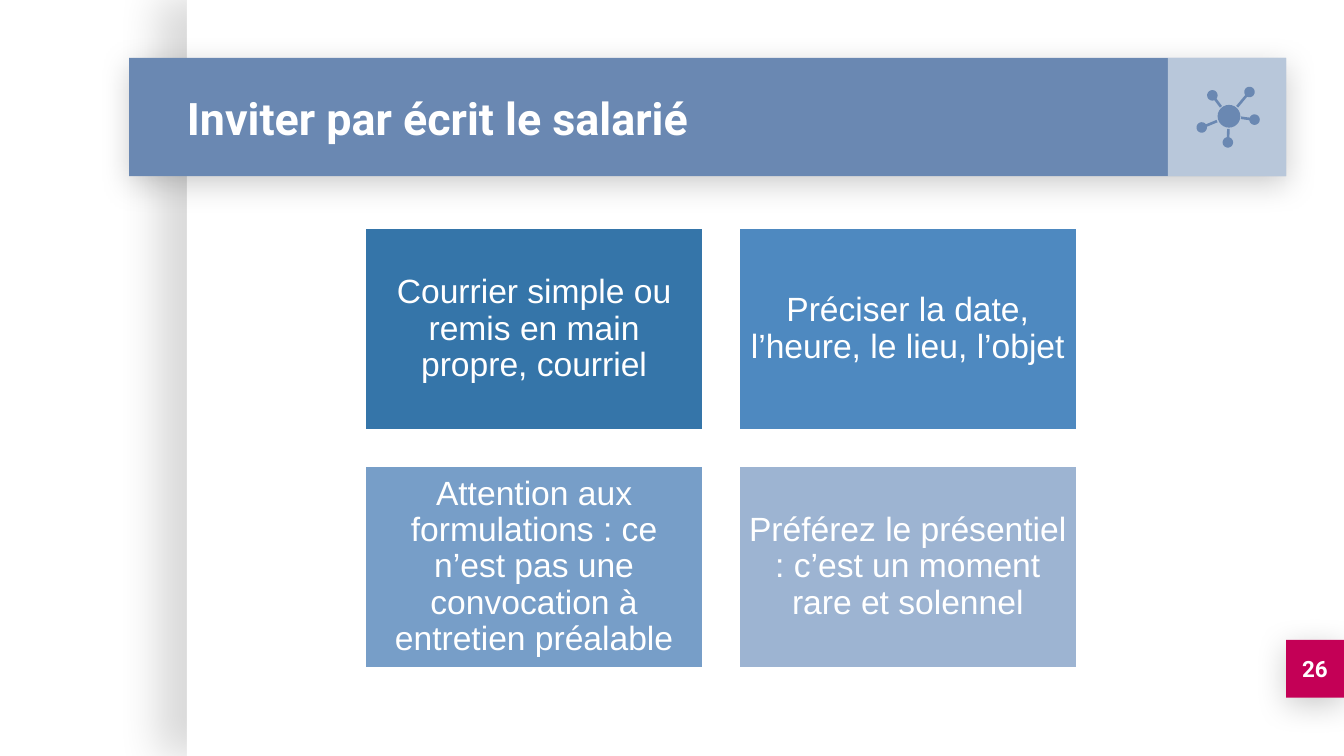
"""Build the slide on inviting the employee in writing."""
import math
from dataclasses import dataclass

from lxml import etree
from pptx import Presentation
from pptx.dml.color import RGBColor
from pptx.enum.shapes import MSO_SHAPE
from pptx.enum.text import MSO_ANCHOR, PP_ALIGN
from pptx.oxml.ns import qn
from pptx.shapes.autoshape import Shape
from pptx.shapes.shapetree import SlideShapes
from pptx.util import Pt

RECTANGLE, OVAL = MSO_SHAPE.RECTANGLE, MSO_SHAPE.OVAL
MIDDLE = MSO_ANCHOR.MIDDLE
LEFT, CENTER = PP_ALIGN.LEFT, PP_ALIGN.CENTER

WHITE = RGBColor(0xFF, 0xFF, 0xFF)
SLATE = RGBColor(0x6A, 0x88, 0xB2)
CRIMSON = RGBColor(0xC4, 0x00, 0x56)
DEEP_BLUE = RGBColor(0x35, 0x75, 0xA9)
MID_BLUE = RGBColor(0x4E, 0x89, 0xC0)
SOFT_BLUE = RGBColor(0x77, 0x9E, 0xC8)
PALE_BLUE = RGBColor(0x9D, 0xB4, 0xD2)

SLIDE_WIDTH, SLIDE_HEIGHT = 720, 405
BAND_TOP, BAND_HEIGHT, BAND_RIGHT = 31, 63.4, 689
CARD_LEFT, CARD_TOP, CARD_WIDTH, CARD_HEIGHT, CARD_GAP = 195.1, 121.7, 182.1, 109.3, 18.1
HUB_X, HUB_Y, HUB_RADIUS = 658.4, 62.3, 6.1
NODE_RADIUS, STEM_HALF_WIDTH, ARC_STEPS = 2.8, 0.7, 24


@dataclass(frozen=True)
class Box:
    left: float
    top: float
    width: float
    height: float


@dataclass(frozen=True)
class Shadow:
    alpha: int
    blur: float
    distance: float
    angle: int


@dataclass(frozen=True)
class Card:
    text: str
    color: RGBColor


@dataclass(frozen=True)
class Node:
    x: float
    y: float
    stem_x: float
    stem_y: float


PAGE_SHADOW = Shadow(15, 22.5, 15, 180)
RAISED_SHADOW = Shadow(20, 16.9, 3.8, 90)

CARDS = [
    Card("Courrier simple ou remis en main propre, courriel", DEEP_BLUE),
    Card("Préciser la date, l’heure, le lieu, l’objet", MID_BLUE),
    Card("Attention aux formulations : ce n’est pas une convocation à entretien préalable", SOFT_BLUE),
    Card("Préférez le présentiel : c’est un moment rare et solennel", PALE_BLUE),
]

NODES = [
    Node(669.4, 49.3, 662.8, 57.2),
    Node(649.5, 51.1, 654.1, 57.2),
    Node(643.8, 68.3, 652, 64.9),
    Node(657.8, 76.3, 658.1, 69.1),
    Node(672.1, 64.1, 664.9, 63.1),
]


def paint(shape: Shape, color: RGBColor) -> None:
    """Give a shape a flat fill without line or shadow."""
    shape.shadow.inherit = False
    shape.fill.solid()
    shape.fill.fore_color.rgb = color
    shape.line.fill.background()


def add_block(shapes: SlideShapes, box: Box, color: RGBColor, kind: MSO_SHAPE = RECTANGLE) -> Shape:
    """Add a flat preset shape."""
    block = shapes.add_shape(kind, Pt(box.left), Pt(box.top), Pt(box.width), Pt(box.height))
    paint(block, color)
    return block


def cast_shadow(shape: Shape, shadow: Shadow) -> None:
    """Add a black outer shadow to a shape."""
    effects = shape.fill._xPr.find(qn("a:effectLst"))
    outer = etree.SubElement(
        effects, qn("a:outerShdw"), blurRad=str(Pt(shadow.blur)), dist=str(Pt(shadow.distance)),
        dir=str(shadow.angle * 60000), algn="bl", rotWithShape="0")
    black = etree.SubElement(outer, qn("a:srgbClr"), val="000000")
    etree.SubElement(black, qn("a:alpha"), val=str(shadow.alpha * 1000))


def write(shape: Shape, text: str, font: str, size: float, inset: float,
          align: PP_ALIGN = CENTER, bold: bool = False, spacing: float = 1.0) -> None:
    """Write one white, vertically centred paragraph."""
    frame = shape.text_frame
    frame.word_wrap = True
    frame.vertical_anchor = MIDDLE
    frame.margin_left = frame.margin_right = frame.margin_top = frame.margin_bottom = Pt(inset)
    paragraph = frame.paragraphs[0]
    paragraph.text = text
    paragraph.alignment = align
    paragraph.line_spacing = spacing
    paragraph.font.name = font
    paragraph.font.size = Pt(size)
    paragraph.font.bold = bold
    paragraph.font.color.rgb = WHITE


def add_card(shapes: SlideShapes, card: Card, index: int) -> None:
    """Place a card in the two-column grid."""
    row, column = divmod(index, 2)
    box = Box(CARD_LEFT + column * (CARD_WIDTH + CARD_GAP),
              CARD_TOP + row * (CARD_HEIGHT + CARD_GAP), CARD_WIDTH, CARD_HEIGHT)
    block = add_block(shapes, box, card.color)
    block.line.color.rgb = WHITE
    block.line.width = Pt(2)
    write(block, card.text, "Arial", 18, 5.4, spacing=0.9)


def add_node(shapes: SlideShapes, node: Node) -> None:
    """Draw a round node and its stem as one outline."""
    heading = math.atan2(node.stem_y - node.y, node.stem_x - node.x)
    opening = math.asin(STEM_HALF_WIDTH / NODE_RADIUS)
    sweep = 2 * (math.pi - opening)
    angles = [heading + opening + sweep * step / ARC_STEPS for step in range(ARC_STEPS + 1)]
    arc = [(node.x + NODE_RADIUS * math.cos(angle), node.y + NODE_RADIUS * math.sin(angle))
           for angle in angles]
    side_x, side_y = -STEM_HALF_WIDTH * math.sin(heading), STEM_HALF_WIDTH * math.cos(heading)
    outline = [(node.stem_x + side_x, node.stem_y + side_y), *arc,
               (node.stem_x - side_x, node.stem_y - side_y)]
    points = [(Pt(x), Pt(y)) for x, y in outline]
    builder = shapes.build_freeform(*points[0])
    builder.add_line_segments(points[1:], close=True)
    paint(builder.convert_to_shape(), SLATE)


def main() -> None:
    """Build and save the slide."""
    presentation = Presentation()
    presentation.slide_width, presentation.slide_height = Pt(SLIDE_WIDTH), Pt(SLIDE_HEIGHT)
    shapes = presentation.slides.add_slide(presentation.slide_layouts[6]).shapes

    page = add_block(shapes, Box(100.1, 0, SLIDE_WIDTH - 100.1, SLIDE_HEIGHT), WHITE)
    cast_shadow(page, PAGE_SHADOW)
    page_number = add_block(shapes, Box(BAND_RIGHT, 342.8, 31, 31), CRIMSON)
    cast_shadow(page_number, RAISED_SHADOW)
    write(page_number, "26", "Roboto", 12, 7.2, bold=True)

    band = add_block(shapes, Box(69.1, BAND_TOP, BAND_RIGHT - 69.1, BAND_HEIGHT), SLATE)
    cast_shadow(band, RAISED_SHADOW)
    icon_tile = add_block(
        shapes, Box(BAND_RIGHT - BAND_HEIGHT, BAND_TOP, BAND_HEIGHT, BAND_HEIGHT), WHITE)
    tile_color = icon_tile.fill._xPr.find(qn("a:solidFill")).find(qn("a:srgbClr"))
    etree.SubElement(tile_color, qn("a:alpha"), val="53000")

    title = shapes.add_textbox(Pt(93.1), Pt(BAND_TOP), Pt(530.6), Pt(BAND_HEIGHT))
    write(title, "Inviter par écrit le salarié", "Roboto", 24, 7.2, align=LEFT, bold=True)

    for node in NODES:
        add_node(shapes, node)
    add_block(shapes, Box(HUB_X - HUB_RADIUS, HUB_Y - HUB_RADIUS, 2 * HUB_RADIUS, 2 * HUB_RADIUS),
              SLATE, OVAL)

    for index, card in enumerate(CARDS):
        add_card(shapes, card, index)

    presentation.save("out.pptx")


if __name__ == "__main__":
    main()
